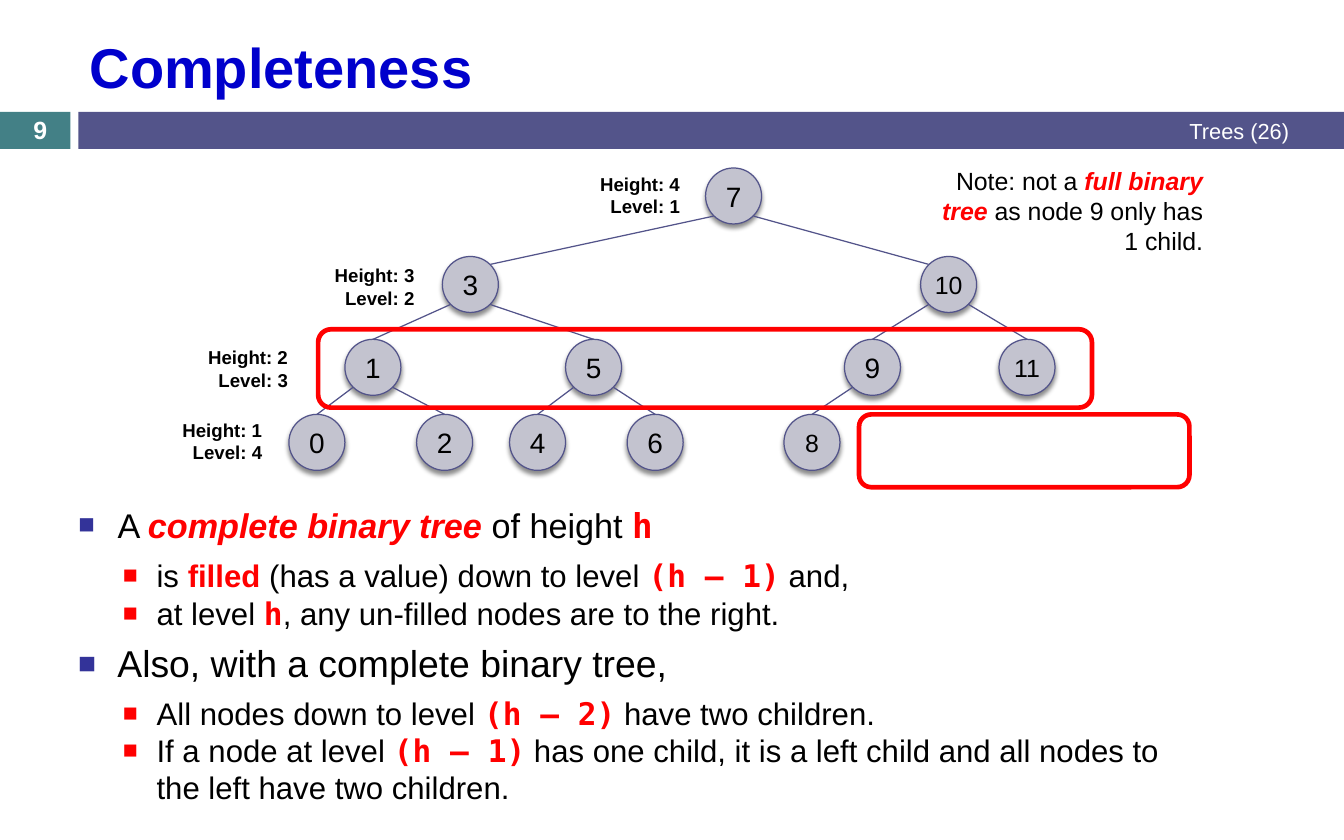
from lxml.etree import SubElement
from pptx import Presentation
from pptx.dml.color import RGBColor
from pptx.enum.shapes import MSO_CONNECTOR, MSO_SHAPE
from pptx.enum.text import MSO_ANCHOR, MSO_AUTO_SIZE, PP_ALIGN
from pptx.oxml.ns import qn
from pptx.util import Emu, Pt

PX = 9144  # 100 px to the inch
COLORS = {
    "title": "0000CC", "teal": "438086", "indigo": "53548A", "node": "C3C3CF",
    "red": "FF0000", "bullet": "333399", "black": "000000", "white": "FFFFFF",
}
STYLES = {
    "plain": dict(name="Arial", color="black", bold=False),
    "light": dict(name="Arial", color="white", bold=False),
    "page": dict(name="Arial", color="white", bold=True),
    "title": dict(name="Arial", color="title", bold=True),
    "label": dict(name="Arial", color="black", bold=True),
    "strong": dict(name="Arial", color="red", bold=True),
    "term": dict(name="Arial", color="red", bold=True, italic=True),
    "code": dict(name="DejaVu Sans Mono", color="red", bold=True),
}
# bullet level: left margin px, hanging px, bullet colour
LEVELS = [(35, 35, "bullet"), (70, 30, "red")]
NODE = 50
DIAGONAL = 18  # centre to the 45° point of a node, along each axis
ROWS = [0, 79, 153, 220]
# value: (left, row, size, parent)
NODES = {
    "7": (372, 0, 18, None),
    "3": (137, 1, 18, "7"), "10": (564, 1, 16, "7"),
    "1": (50, 2, 18, "3"), "5": (247, 2, 18, "3"),
    "9": (496, 2, 18, "10"), "11": (634, 2, 16, "10"),
    "0": (0, 3, 18, "1"), "2": (114, 3, 18, "1"),
    "4": (197, 3, 18, "5"), "6": (302, 3, 18, "5"), "8": (442, 3, 16, "9"),
}


def px(*values):
    return [Emu(v * PX) for v in values]


def rgb(name):
    return RGBColor.from_string(COLORS[name])


def write(p, runs, size, align=PP_ALIGN.LEFT, before=0):
    """Fill a paragraph with (text, style name) runs."""
    p.alignment, p.space_before = align, Pt(before)
    for text, style in runs:
        r = p.add_run()
        r.text, r.font.size = text, Pt(size)
        for key, value in STYLES[style].items():
            if key == "color":
                r.font.color.rgb = rgb(value)
            else:
                setattr(r.font, key, value)


def set_frame(tf, **extra):
    values = dict(word_wrap=True, auto_size=MSO_AUTO_SIZE.NONE,
                  vertical_anchor=MSO_ANCHOR.TOP)
    for key, value in {**values, **extra}.items():
        setattr(tf, key, value)
    return tf


def add_text(s, box, paragraphs, size, align=PP_ALIGN.LEFT,
             anchor=MSO_ANCHOR.TOP):
    tf = set_frame(s.shapes.add_textbox(*px(*box)).text_frame,
                   vertical_anchor=anchor)
    for i, runs in enumerate(paragraphs):
        write(tf.add_paragraph() if i else tf.paragraphs[0], runs, size, align)


def add_shape(s, kind, box, fill=None, line=None, width=1):
    sp = s.shapes.add_shape(kind, *px(*box))
    sp.shadow.inherit = False
    if fill:
        sp.fill.solid()
        sp.fill.fore_color.rgb = rgb(fill)
    else:
        sp.fill.background()
    if line:
        sp.line.color.rgb, sp.line.width = rgb(line), Pt(width)
    else:
        sp.line.fill.background()
    return sp


def add_shadow(sp):
    effects = sp._element.spPr.find(qn("a:effectLst"))
    shadow = SubElement(effects, qn("a:outerShdw"), blurRad=str(Pt(3)),
                        dist=str(Pt(2.4)), dir="5400000", rotWithShape="0")
    color = SubElement(shadow, qn("a:srgbClr"), val=COLORS["black"])
    SubElement(color, qn("a:alpha"), val="45000")


def add_edge(s, start, end):
    line = s.shapes.add_connector(MSO_CONNECTOR.STRAIGHT, *px(*start, *end))
    line.line.color.rgb, line.line.width = rgb("indigo"), Pt(0.79)
    SubElement(line._element.spPr, qn("a:effectLst"))


def add_header(s, x, y, w, h):
    add_shape(s, MSO_SHAPE.RECTANGLE, (x, y, 63, h), "teal")
    add_shape(s, MSO_SHAPE.RECTANGLE, (x + 70, y, w - 70, h), "indigo")
    title = s.shapes.title
    title.left, title.top, title.width, title.height = px(x + 70, y - 81, 1091, 80)
    tf = set_frame(title.text_frame, vertical_anchor=MSO_ANCHOR.MIDDLE)
    write(tf.paragraphs[0], [("Completeness", "title")], 36)
    add_text(s, (x + 450, y - 1, 711, 35), [[("Trees (26)", "light")]], 14,
             PP_ALIGN.RIGHT, MSO_ANCHOR.MIDDLE)
    add_text(s, (x, y + 1, 72, 30), [[("9", "page")]], 16,
             PP_ALIGN.CENTER, MSO_ANCHOR.MIDDLE)


def add_tree(s, x, y):
    centers = {value: (x + left + NODE // 2, y + ROWS[row] + NODE // 2)
               for value, (left, row, _, _) in NODES.items()}
    for value, (left, row, size, parent) in NODES.items():
        sp = add_shape(s, MSO_SHAPE.OVAL, (x + left, y + ROWS[row], NODE, NODE),
                       "node", "indigo", 0.79)
        add_shadow(sp)
        tf = set_frame(sp.text_frame, vertical_anchor=MSO_ANCHOR.MIDDLE,
                       margin_left=0, margin_right=0, margin_top=0, margin_bottom=0)
        write(tf.paragraphs[0], [(value, "plain")], size, PP_ALIGN.CENTER)
        if parent:
            (px0, py0), (cx, cy) = centers[parent], centers[value]
            side = DIAGONAL if cx > px0 else -DIAGONAL
            # Edges from the root meet the child's inner shoulder, others its top.
            end = ((cx - side, cy - DIAGONAL) if row == 1
                   else (cx, cy - NODE // 2))
            add_edge(s, (px0 + side, py0 + DIAGONAL), end)
    # Right edge and top of each label, from the root down
    for i, (right, top) in enumerate([(359, -1), (122, 81), (9, 154), (-14, 219)]):
        lines = [[(f"Height: {4 - i}", "label")], [(f"Level: {i + 1}", "label")]]
        add_text(s, (x + right - 105, y + top, 105, 48), lines, 12, PP_ALIGN.RIGHT)
    for left, top, w, h in [(26, 144, 691, 70), (509, 220, 295, 65)]:
        add_shape(s, MSO_SHAPE.ROUNDED_RECTANGLE, (x + left, y + top, w, h),
                  line="red", width=3)


def add_note(s, *box):
    add_text(s, box, [[("Note: not a ", "plain"), ("full binary tree ", "term"),
                       ("as node 9 only has 1 child.", "plain")]],
             16, PP_ALIGN.RIGHT)


def add_bullets(sp, items):
    """Write (level, size, space before, runs) items as a bulleted list."""
    tf = set_frame(sp.text_frame)
    for i, (level, size, before, runs) in enumerate(items):
        p = tf.add_paragraph() if i else tf.paragraphs[0]
        p.level = level
        write(p, runs, size, before=before)
        margin, hang, color = LEVELS[level]
        pPr = p._p.get_or_add_pPr()
        pPr.set("marL", str(margin * PX))
        pPr.set("indent", str(-hang * PX))
        SubElement(SubElement(pPr, qn("a:buClr")), qn("a:srgbClr"), val=COLORS[color])
        SubElement(pPr, qn("a:buSzPct"), val="80000")
        SubElement(pPr, qn("a:buFont"), typeface="Arial")
        SubElement(pPr, qn("a:buChar"), char="■")


def add_definition(s, x, y, w):
    body = s.placeholders[1]
    body.left, body.top, body.width, body.height = px(x, y, w, 47)
    add_bullets(body, [(0, 22, 7, [
        ("A ", "plain"), ("complete binary tree ", "term"),
        ("of height ", "plain"), ("h", "code")])])
    details = [
        (47, 44, [(1, 20, 5.5, [
            ("is ", "plain"), ("filled", "strong"),
            (" (has a value) down to level ", "plain"),
            ("(h – 1)", "code"), (" and,", "plain")])]),
        (81, 43, [(1, 20, 0, [
            ("at level ", "plain"), ("h", "code"),
            (", any un-filled nodes are to the right.", "plain")])]),
        (122, 175, [
            (0, 24, 7, [("Also, with a complete binary tree,", "plain")]),
            (1, 20, 5.5, [("All nodes down to level ", "plain"),
                          ("(h – 2)", "code"), (" have two children.", "plain")]),
            (1, 20, 0, [("If a node at level ", "plain"), ("(h – 1)", "code"),
                        (" has one child, it is a left child and all nodes to "
                         "the left have two children.", "plain")])]),
    ]
    for top, h, items in details:
        add_bullets(s.shapes.add_textbox(*px(x, y + top, w, h)), items)


def main():
    prs = Presentation()
    prs.slide_width, prs.slide_height = px(1200, 750)
    s = prs.slides.add_slide(prs.slide_layouts[1])
    add_header(s, 0, 100, 1200, 33)
    add_tree(s, 258, 150)
    add_note(s, 823, 143, 261, 98)
    add_definition(s, 60, 445, 1006)
    prs.save("out.pptx")


if __name__ == "__main__":
    main()
